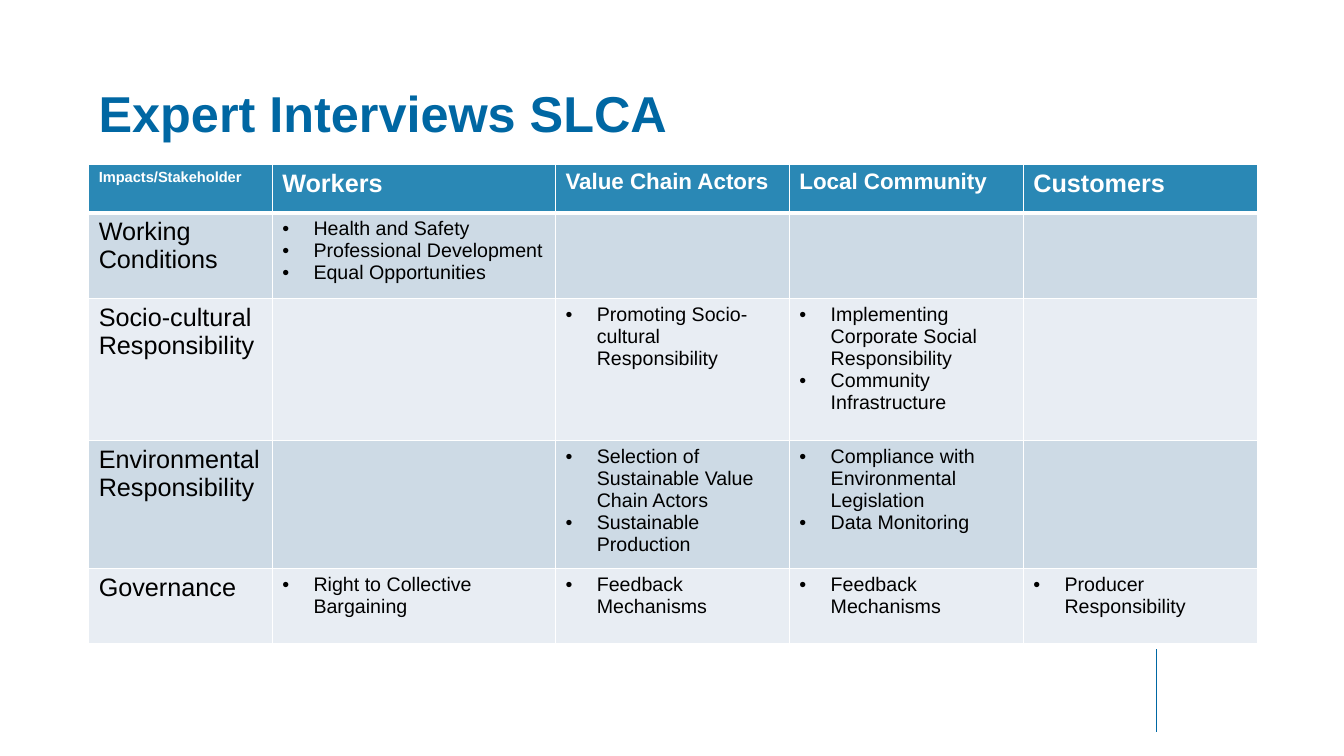
from dataclasses import dataclass

from lxml.etree import SubElement
from pptx import Presentation
from pptx.dml.color import RGBColor
from pptx.enum.text import MSO_ANCHOR
from pptx.oxml.ns import qn
from pptx.util import Inches, Pt


@dataclass(frozen=True)
class Theme:
    font: str = "Arial"
    accent: str = "0067A3"
    header_fill: str = "2A88B5"
    band_fills: tuple = ("CDDAE5", "E8EDF3")
    white: str = "FFFFFF"
    black: str = "000000"
    title_size: float = 36
    label_size: float = 18
    bullet_size: float = 14


THEME = Theme()

COLUMN_WIDTHS = (1.82, 2.81, 2.32, 2.32, 2.32)
ROW_HEIGHTS = (0.48, 0.85, 1.41, 1.19, 0.75)

# Header text and its size
STAKEHOLDERS = (
    ("Impacts/Stakeholder", 10.5),
    ("Workers", 18),
    ("Value Chain Actors", 16),
    ("Local Community", 16),
    ("Customers", 18),
)

# Impact, then the topics for each stakeholder
IMPACTS = (
    ("Working Conditions",
     ["Health and Safety", "Professional Development", "Equal Opportunities"],
     [], [], []),
    ("Socio-cultural Responsibility",
     [],
     ["Promoting Socio-cultural Responsibility"],
     ["Implementing Corporate Social Responsibility", "Community Infrastructure"],
     []),
    ("Environmental Responsibility",
     [],
     ["Selection of Sustainable Value Chain Actors", "Sustainable Production"],
     ["Compliance with Environmental Legislation", "Data Monitoring"],
     []),
    ("Governance",
     ["Right to Collective Bargaining"],
     ["Feedback Mechanisms"],
     ["Feedback Mechanisms"],
     ["Producer Responsibility"]),
)


def style_text(para, size, color, bold=False):
    for span in para.runs:
        span.font.name = THEME.font
        span.font.size = Pt(size)
        span.font.bold = bold
        span.font.color.rgb = RGBColor.from_string(color)


def add_title(page, text):
    box = page.shapes.add_textbox(Inches(0.88), Inches(0.84), Inches(11.81), Inches(0.62))
    frame = box.text_frame
    frame.word_wrap = True
    frame.vertical_anchor = MSO_ANCHOR.MIDDLE
    frame.text = text
    para = frame.paragraphs[0]
    para.line_spacing = 0.9
    style_text(para, THEME.title_size, THEME.accent, bold=True)


def add_footer_line(page):
    line = page.shapes.add_connector(1, Inches(11.47), Inches(6.44), Inches(11.47), Inches(7.26))
    line.line.color.rgb = RGBColor.from_string(THEME.accent)
    line.line.width = Pt(0.5)
    SubElement(line._element.spPr, qn("a:effectLst"))


def add_bullet(para):
    properties = para._p.get_or_add_pPr()
    properties.set("marL", str(Inches(0.31)))
    properties.set("indent", str(-Inches(0.31)))
    SubElement(properties, qn("a:buFont"), typeface=THEME.font)
    SubElement(properties, qn("a:buChar"), char="•")


def style_cell(cell, fill, bottom_width=1, top_width=1):
    # Borders come before the fill in the cell properties
    properties = cell._tc.get_or_add_tcPr()
    widths = {"a:lnL": 1, "a:lnR": 1, "a:lnT": top_width, "a:lnB": bottom_width}
    for side, width in widths.items():
        border = SubElement(properties, qn(side), w=str(Pt(width)))
        paint = SubElement(border, qn("a:solidFill"))
        SubElement(paint, qn("a:srgbClr"), val=THEME.white)
    cell.fill.solid()
    cell.fill.fore_color.rgb = RGBColor.from_string(fill)


def write_label(cell, text, size, color, bold=False):
    cell.text_frame.text = text
    style_text(cell.text_frame.paragraphs[0], size, color, bold)


def write_topics(cell, topics):
    cell.text_frame.text = "\n".join(topics)
    for para in cell.text_frame.paragraphs:
        if topics:
            add_bullet(para)
        para.font.size = Pt(THEME.bullet_size)
        style_text(para, THEME.bullet_size, THEME.black)


def add_impact_table(page):
    table = page.shapes.add_table(
        len(ROW_HEIGHTS), len(COLUMN_WIDTHS), Inches(0.88), Inches(1.63),
        Inches(sum(COLUMN_WIDTHS)), Inches(sum(ROW_HEIGHTS))).table
    for column, width in zip(table.columns, COLUMN_WIDTHS):
        column.width = Inches(width)
    for row, height in zip(table.rows, ROW_HEIGHTS):
        row.height = Inches(height)

    # Header row
    for index, (text, size) in enumerate(STAKEHOLDERS):
        cell = table.cell(0, index)
        write_label(cell, text, size, THEME.white, bold=True)
        style_cell(cell, THEME.header_fill, bottom_width=3)

    # Impact rows in alternating bands
    for row_index, (impact, *topic_lists) in enumerate(IMPACTS, start=1):
        write_label(table.cell(row_index, 0), impact, THEME.label_size, THEME.black)
        for column_index, topics in enumerate(topic_lists, start=1):
            write_topics(table.cell(row_index, column_index), topics)
        for cell in table.rows[row_index].cells:
            style_cell(cell, THEME.band_fills[(row_index - 1) % 2],
                       top_width=3 if row_index == 1 else 1)


def main():
    deck = Presentation()
    deck.slide_width = Inches(13.33)
    deck.slide_height = Inches(7.5)
    page = deck.slides.add_slide(deck.slide_layouts[6])
    add_footer_line(page)
    add_title(page, "Expert Interviews SLCA")
    add_impact_table(page)
    deck.save("out.pptx")


if __name__ == "__main__":
    main()
